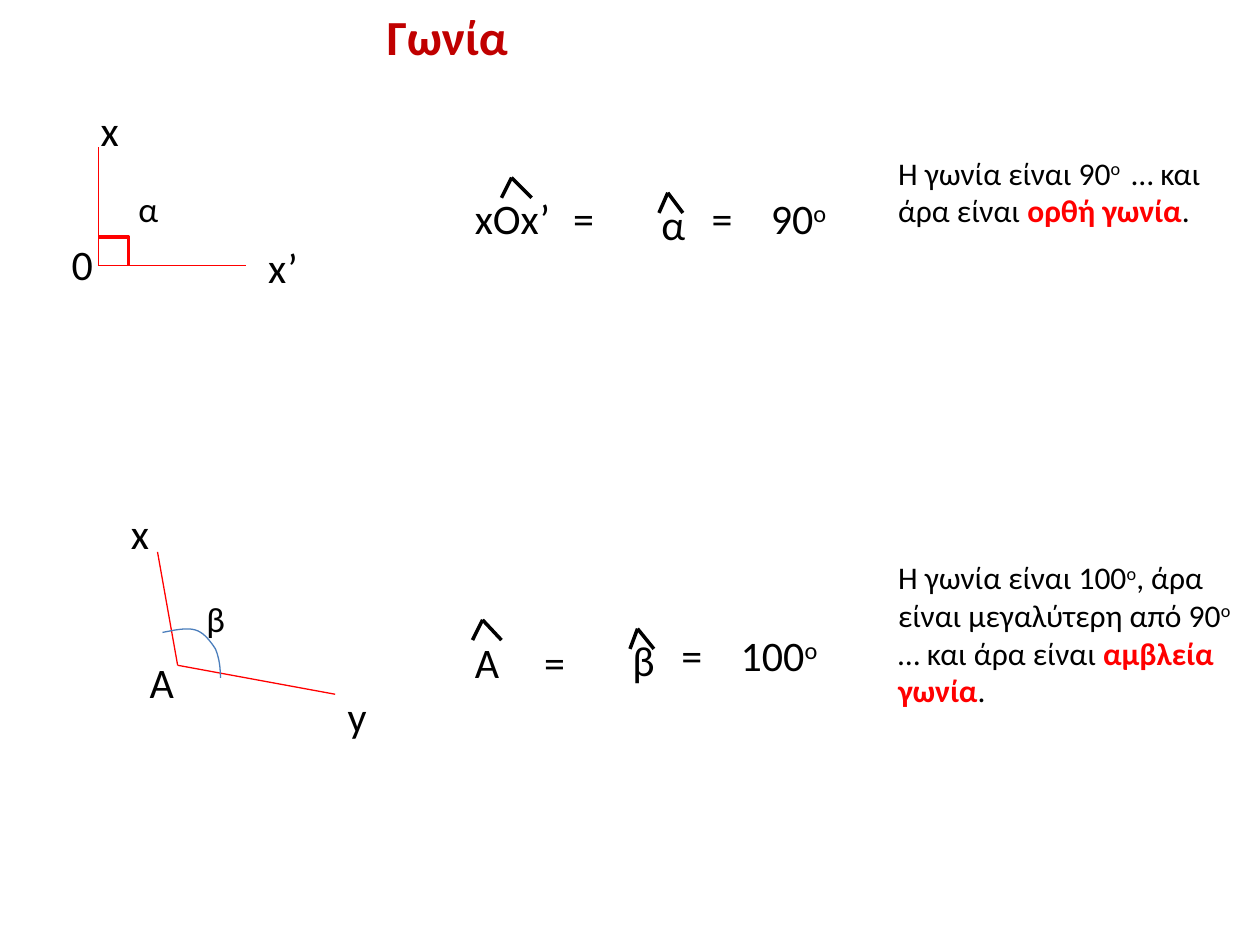
"""Build a slide on right and obtuse angles with their notation."""
from lxml.etree import SubElement
from pptx import Presentation
from pptx.dml.color import RGBColor
from pptx.enum.shapes import MSO_CONNECTOR
from pptx.enum.text import MSO_ANCHOR, MSO_AUTO_SIZE, PP_ALIGN
from pptx.oxml.ns import qn
from pptx.util import Inches, Pt

BLACK = RGBColor(0x00, 0x00, 0x00)
RED = RGBColor(0xFF, 0x00, 0x00)
DARK_RED = RGBColor(0xC0, 0x00, 0x00)
BLUE = RGBColor(0x4B, 0x7E, 0xBC)

prs = Presentation()
prs.slide_width, prs.slide_height = Inches(10), Inches(7.5)
s = prs.slides.add_slide(prs.slide_layouts[5])


def add_text(text, x, y, w, h=0.5, size=24, sup="", rest=()):
    sp = s.shapes.add_textbox(Inches(x), Inches(y), Inches(w), Inches(h))
    tf = sp.text_frame
    tf.word_wrap = True
    p = tf.paragraphs[0]
    for run_text, style in [(text, ""), (sup, "sup"), *rest]:
        if not run_text:
            continue
        r = p.add_run()
        r.text = run_text
        r.font.name, r.font.size = "Calibri", Pt(size)
        r.font.bold = style == "key"
        r.font.color.rgb = RED if style == "key" else BLACK
        if style == "sup":
            r.font._element.set("baseline", "30000")


def add_line(x1, y1, x2, y2, color, width):
    line = s.shapes.add_connector(MSO_CONNECTOR.STRAIGHT, Inches(x1), Inches(y1),
                                  Inches(x2), Inches(y2))
    line.line.color.rgb = color
    line.line.width = Pt(width)
    SubElement(line._element.spPr, qn("a:effectLst"))


title = s.shapes.title
title.left, title.top = Inches(2.97), Inches(0)
title.width, title.height = Inches(5), Inches(0.57)
tf = title.text_frame
tf.auto_size = MSO_AUTO_SIZE.NONE
tf.vertical_anchor = MSO_ANCHOR.TOP
p = tf.paragraphs[0]
p.alignment = PP_ALIGN.LEFT
r = p.add_run()
r.text = "Γωνία"
r.font.name, r.font.size, r.font.bold = "Calibri", Pt(28), True
r.font.color.rgb = DARK_RED

for vertex, ends in [((0.78, 2.11), [(0.78, 1.17), (1.95, 2.11)]),
                     ((1.41, 5.28), [(1.25, 4.38), (2.66, 5.51)])]:
    for end in ends:
        add_line(*vertex, *end, RED, 0.75)

for x, y, left, right in [(4.06, 1.41, 0.08, 0.16), (5.3, 1.53, 0.07, 0.12),
                          (3.83, 4.92, 0.08, 0.15), (5.06, 4.99, 0.06, 0.13)]:
    add_line(x, y, x - left, y + 0.16, BLACK, 2)
    add_line(x, y, x + right, y + 0.16, BLACK, 2)

for text, x, y, w in [
    ("0", 0.47, 1.84, 0.37), ("x", 0.7, 0.78, 0.35), ("x’", 2.03, 1.87, 0.44),
    ("xOx’", 3.67, 1.48, 0.94), ("=", 4.45, 1.48, 0.39),
    ("α", 5.15, 1.53, 0.48), ("=", 5.55, 1.48, 0.39),
    ("Α", 1.09, 5.16, 0.4), ("x", 0.94, 3.98, 0.35), ("y", 2.66, 5.43, 0.35),
    ("Α", 3.67, 5, 0.78), ("=", 4.22, 5, 0.39),
    ("β", 4.92, 4.99, 0.48), ("=", 5.31, 4.95, 0.39),
]:
    add_text(text, x, y, w)

add_text("α", 1, 1.44, 0.41, 0.44, size=20)
add_text("β", 1.54, 4.69, 0.41, 0.44, size=20)
add_text("90", 6.02, 1.48, 1.09, sup="ο")
add_text("100", 5.78, 4.95, 1.09, sup="ο")

add_text("Η γωνία είναι 90", 7.03, 1.17, 2.97, 1.01, size=18, sup="ο ",
         rest=[(" … και άρα είναι ", ""), ("ορθή γωνία", "key"), (".", "")])
add_text("Η γωνία είναι 100", 7.03, 4.38, 2.97, 1.62, size=18, sup="ο",
         rest=[(", άρα είναι μεγαλύτερη από 90", ""), ("ο", "sup"),
               (" … και άρα είναι ", ""), ("αμβλεία γωνία", "key"), (".", "")])

STEPS = 10
arc = [(1.29, 5.02)]
for c1, c2, end in [((1.39, 5), (1.48, 4.98), (1.55, 5)),
                    ((1.62, 5.02), (1.67, 5.09), (1.71, 5.15)),
                    ((1.74, 5.22), (1.75, 5.3), (1.75, 5.38))]:
    start = arc[-1]
    for i in range(1, STEPS + 1):
        t = i / STEPS
        arc.append(tuple((1 - t) ** 3 * a + 3 * (1 - t) ** 2 * t * b
                         + 3 * (1 - t) * t ** 2 * c + t ** 3 * d
                         for a, b, c, d in zip(start, c1, c2, end)))
right_angle = [(0.78, 1.88), (1.02, 1.88), (1.02, 2.11)]

for points, color, width in [(arc, BLUE, 0.75), (right_angle, RED, 2)]:
    points = [(Inches(x), Inches(y)) for x, y in points]
    builder = s.shapes.build_freeform(*points[0])
    builder.add_line_segments(points[1:], close=False)
    sp = builder.convert_to_shape()
    sp.shadow.inherit = False
    sp.fill.background()
    sp.line.color.rgb = color
    sp.line.width = Pt(width)

prs.save("out.pptx")
